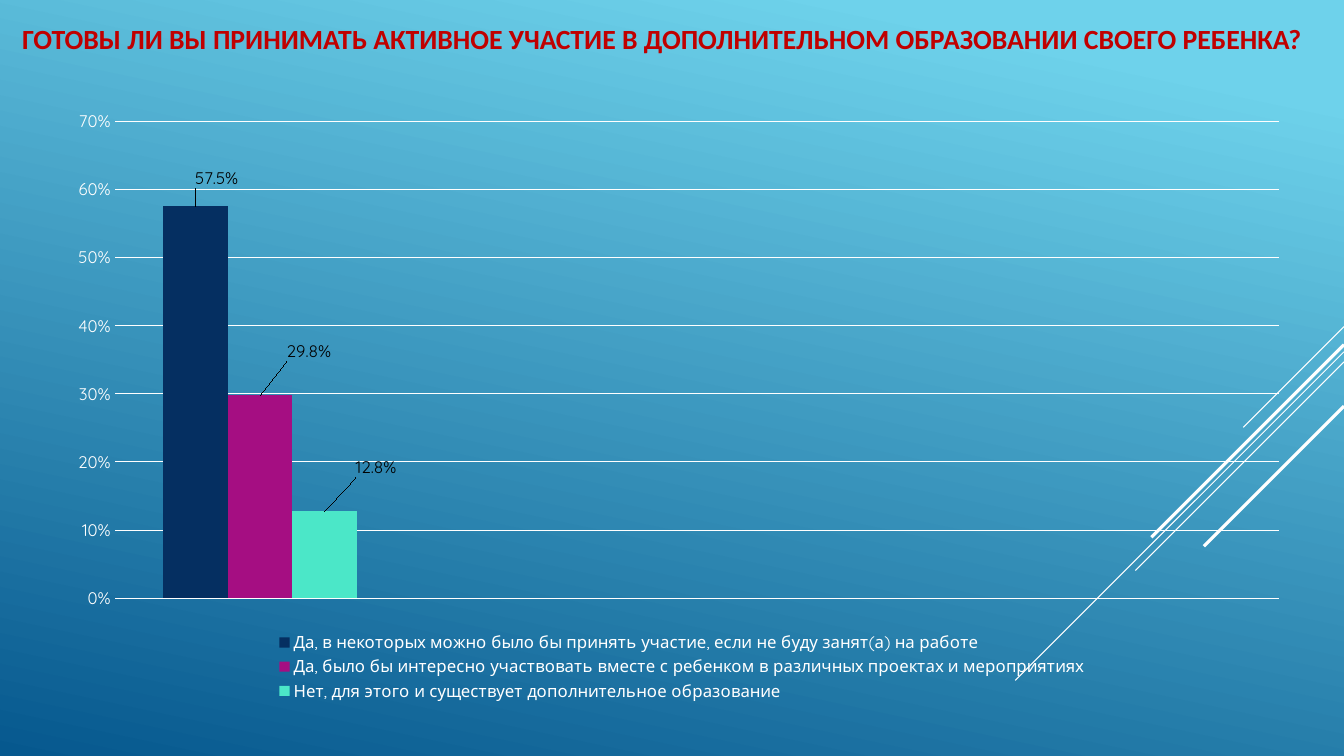
import pptx
import pptx.chart.data
import pptx.dml.color
import pptx.enum.chart
import pptx.enum.shapes
import pptx.enum.text
import pptx.oxml
import pptx.oxml.ns
import pptx.util
from pptx.util import Inches

RGBColor = pptx.dml.color.RGBColor
WHITE = RGBColor(0xFF, 0xFF, 0xFF)
BLACK = RGBColor(0x00, 0x00, 0x00)
RED = RGBColor(0xC0, 0x00, 0x00)
SKY = RGBColor(0x6E, 0xD2, 0xEB)
DEEP_BLUE = RGBColor(0x06, 0x58, 0x8E)
NAVY = RGBColor(0x05, 0x2F, 0x61)
PURPLE = RGBColor(0xA5, 0x0E, 0x82)
MINT = RGBColor(0x4B, 0xE7, 0xC8)


def style_font(font, size, color, name="Quicksand"):
    font.size = pptx.util.Pt(size)
    font.color.rgb = color
    font.name = name


def manual_layout(**settings):
    """Return a c:layout element with the given settings, in schema order."""
    items = "".join(f'<c:{key} val="{value}"/>' for key, value in settings.items())
    return pptx.oxml.parse_xml(
        f'<c:layout {pptx.oxml.ns.nsdecls("c")}>'
        f"<c:manualLayout>{items}</c:manualLayout></c:layout>"
    )


deck = pptx.Presentation()
deck.slide_width = Inches(13.33)
deck.slide_height = Inches(7.5)
slide = deck.slides.add_slide(deck.slide_layouts[5])

background = slide.background.fill
background.gradient()
background.gradient_angle = 258
for stop, position, color in zip(background.gradient_stops, (0.1, 1), (SKY, DEEP_BLUE)):
    stop.position = position
    stop.color.rgb = color

# Diagonal lines: height at the right edge, length along each axis, weight
for edge_y, reach, weight in (
    (3.24, 1, 0.75),
    (3.49, 3.26, 0.75),
    (3.59, 2.07, 0.75),
    (3.42, 1.91, 2.25),
    (4.03, 1.39, 2.25),
):
    diagonal = slide.shapes.add_connector(
        pptx.enum.shapes.MSO_CONNECTOR.STRAIGHT,
        Inches(13.33), Inches(edge_y), Inches(13.33 - reach), Inches(edge_y + reach),
    )
    diagonal.line.color.rgb = WHITE
    diagonal.line.width = pptx.util.Pt(weight)
    properties = diagonal._element.spPr
    properties.append(pptx.oxml.parse_xml(f'<a:effectLst {pptx.oxml.ns.nsdecls("a")}/>'))

title = slide.shapes.title
title.left, title.top = Inches(0.12), Inches(0.25)
title.width, title.height = Inches(13.08), Inches(0.27)
frame = title.text_frame
frame.word_wrap = True
frame.auto_size = pptx.enum.text.MSO_AUTO_SIZE.NONE
frame.vertical_anchor = pptx.enum.text.MSO_ANCHOR.MIDDLE
para = frame.paragraphs[0]
para.alignment = pptx.enum.text.PP_ALIGN.LEFT
span = para.add_run()
span.text = "ГОТОВЫ ЛИ ВЫ ПРИНИМАТЬ АКТИВНОЕ УЧАСТИЕ В ДОПОЛНИТЕЛЬНОМ ОБРАЗОВАНИИ СВОЕГО РЕБЕНКА?"
style_font(span.font, 19.8, RED, "Calibri")
span.font.bold = True

# Answer, share, bar colour, label shift as a fraction of the chart
answers = (
    ("Да, в некоторых можно было бы принять участие, если не буду занят(а) на работе",
     0.575, NAVY, 0.017, -0.023),
    ("Да, было бы интересно участвовать вместе с ребенком в различных проектах и мероприятиях",
     0.298, PURPLE, 0.039, -0.049),
    ("Нет, для этого и существует дополнительное образование",
     0.128, MINT, 0.041, -0.048),
)
chart_data = pptx.chart.data.CategoryChartData(number_format="0.0%")
chart_data.categories = ["1", "2", "3", "4"]
for answer, share, *_ in answers:
    chart_data.add_series(answer, (share, None, None, None))

chart = slide.shapes.add_chart(
    pptx.enum.chart.XL_CHART_TYPE.COLUMN_CLUSTERED,
    Inches(0.53), Inches(0.98), Inches(12.4), Inches(6.03), chart_data,
).chart
style_font(chart.font, 10, WHITE)
chart.has_title = False
chart.category_axis.visible = False

axis = chart.value_axis
axis.minimum_scale, axis.maximum_scale, axis.major_unit = 0, 0.7, 0.1
axis.major_tick_mark = pptx.enum.chart.XL_TICK_MARK.NONE
axis.format.line.fill.background()
axis.major_gridlines.format.line.color.rgb = WHITE
axis.major_gridlines.format.line.width = pptx.util.Pt(0.75)
axis.tick_labels.number_format = "0%"
axis.tick_labels.number_format_is_linked = False
style_font(axis.tick_labels.font, 12, WHITE)

plot = chart.plots[0]
plot.gap_width = 150
plot.overlap = 0
plot.vary_by_categories = False
for series, (_, _, color, shift_x, shift_y) in zip(plot.series, answers):
    series.format.fill.solid()
    series.format.fill.fore_color.rgb = color
    label = series.points[0].data_label
    style_font(label.font, 12, BLACK)
    label.position = pptx.enum.chart.XL_LABEL_POSITION.OUTSIDE_END
    index = series._element.find(".//" + pptx.oxml.ns.qn("c:dLbl")).find(pptx.oxml.ns.qn("c:idx"))
    index.addnext(manual_layout(x=shift_x, y=shift_y))

chart.has_legend = True
legend = chart.legend
legend.position = pptx.enum.chart.XL_LEGEND_POSITION.BOTTOM
legend.include_in_layout = False
style_font(legend.font, 12, WHITE)
legend_position = legend._element.find(pptx.oxml.ns.qn("c:legendPos"))
legend_position.addnext(
    manual_layout(xMode="edge", yMode="edge", x=0.173, y=0.872, w=0.66, h=0.125)
)

plot_area = chart._chartSpace.chart.plotArea
for automatic_layout in plot_area.findall(pptx.oxml.ns.qn("c:layout")):
    plot_area.remove(automatic_layout)
plot_area.insert(0, manual_layout(
    layoutTarget="inner", xMode="edge", yMode="edge", x=0.049, y=0.037, w=0.931, h=0.785,
))

deck.save("out.pptx")
